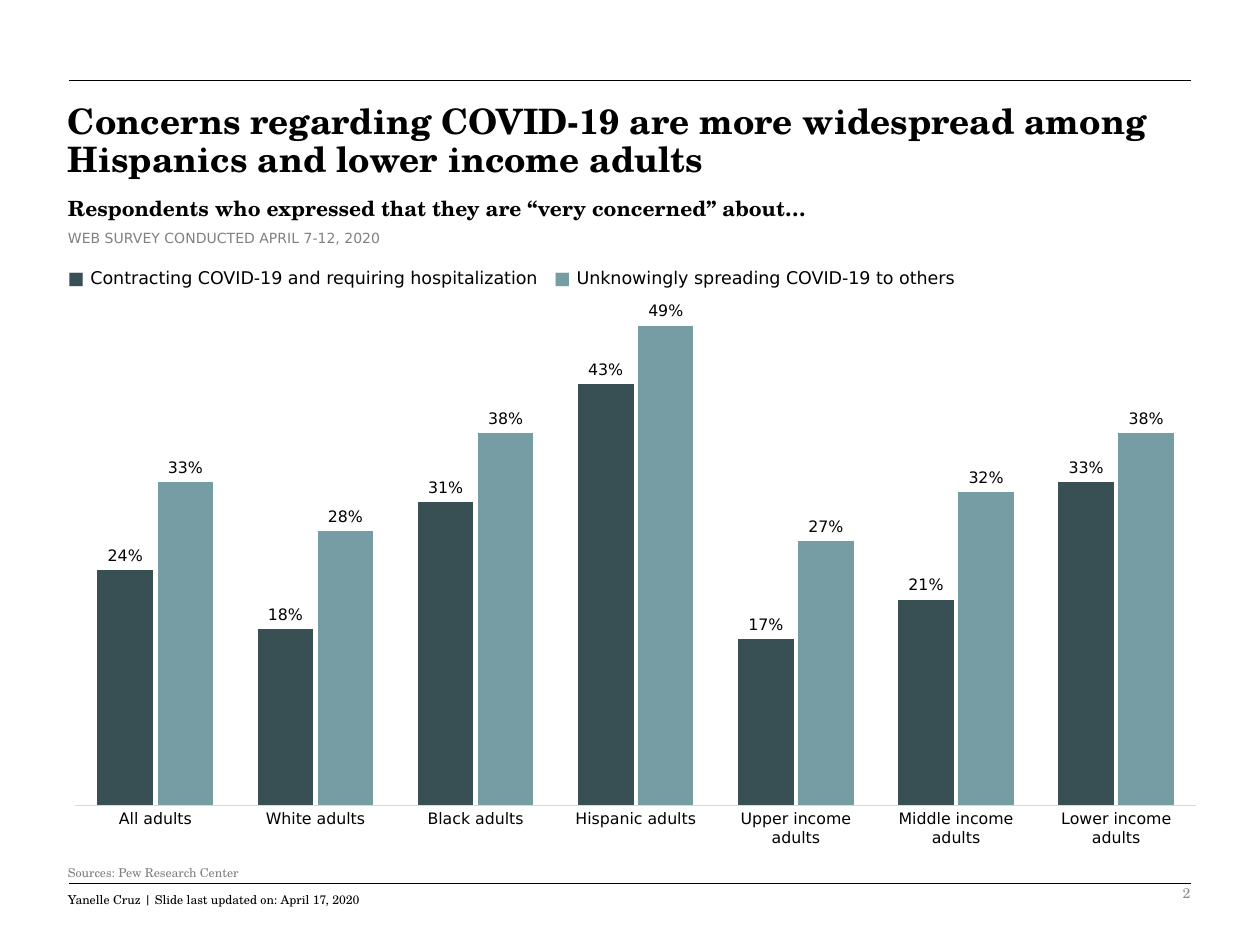
from lxml import etree
from pptx import Presentation
from pptx import util as u
from pptx.chart.data import CategoryChartData
from pptx.dml.color import RGBColor
from pptx.enum import chart as ch
from pptx.enum import shapes, text
from pptx.oxml import parse_xml
from pptx.oxml.ns import nsdecls, qn

BLACK = RGBColor(0x00, 0x00, 0x00)
GRAY = RGBColor(0x80, 0x80, 0x80)
SILVER = RGBColor(0x8C, 0x8C, 0x8C)
PALE = RGBColor(0xD9, 0xD9, 0xD9)
DARK = RGBColor(0x38, 0x50, 0x54)
TEAL = RGBColor(0x76, 0x9D, 0xA3)

SERIF = "TeX Gyre Schola"
SANS = "DejaVu Sans"
LEFT = 1.12
WIDE = 23.37

CATS = ["All adults", "White adults", "Black adults", "Hispanic adults",
        "Upper income adults", "Middle income adults", "Lower income adults"]
SERIES = [
    ("Series 1", DARK, [0.24, 0.18, 0.31, 0.43, 0.17, 0.21, 0.33]),
    ("Series 2", TEAL, [0.33, 0.28, 0.38, 0.49, 0.27, 0.32, 0.38]),
]


def style(font, face, size, color, bold=False):
    font.name = face
    font.size = u.Pt(size)
    font.color.rgb = color
    font.bold = bold


def add_box(slide, left, top, width, height):
    box = slide.shapes.add_textbox(u.Cm(left), u.Cm(top), u.Cm(width), u.Cm(height))
    box.text_frame.word_wrap = True
    return box.text_frame


def add_text(slide, words, place, face, size, color, bold=False, space=None):
    frame = add_box(slide, *place)
    frame.text = words
    para = frame.paragraphs[0]
    para.line_spacing = space
    style(para.runs[0].font, face, size, color, bold)
    return frame


def add_rule(slide, top):
    rule = slide.shapes.add_connector(
        shapes.MSO_CONNECTOR.STRAIGHT, u.Cm(1.4), u.Cm(top), u.Cm(24), u.Cm(top))
    rule.line.color.rgb = BLACK
    rule.line.width = u.Pt(0.5)
    etree.SubElement(rule._element.spPr, qn("a:effectLst"))


def add_key(slide, items):
    """Legend line: a colored square and a label per item, parted by a tab."""
    para = add_box(slide, LEFT, 4.98, 21.36, 0.69).paragraphs[0]
    stop = u.Cm(9.8)
    para._p.get_or_add_pPr().append(parse_xml(
        f'<a:tabLst {nsdecls("a")}><a:tab pos="{stop}" algn="l"/></a:tabLst>'))
    for i, (label, color) in enumerate(items):
        if i:
            para.add_run().text = "\t"
        for words, tint, bold in (("■ ", color, True), (label, BLACK, False)):
            run = para.add_run()
            run.text = words
            style(run.font, SANS, 10, tint, bold)


def set_plot(chart, **sides):
    """Fix the inner plot area as fractions of the chart."""
    area = chart._chartSpace.chart.plotArea
    for old in area.findall(qn("c:layout")):
        area.remove(old)
    parts = "".join(f'<c:{k} val="{v}"/>' for k, v in sides.items())
    area.insert(0, parse_xml(
        f'<c:layout {nsdecls("c")}><c:manualLayout><c:layoutTarget val="inner"/>'
        f'<c:xMode val="edge"/><c:yMode val="edge"/>{parts}'
        '</c:manualLayout></c:layout>'))


def add_bars(slide):
    data = CategoryChartData(number_format="0%")
    data.categories = CATS
    for name, _, vals in SERIES:
        data.add_series(name, vals)
    chart = slide.shapes.add_chart(
        ch.XL_CHART_TYPE.COLUMN_CLUSTERED, u.Cm(LEFT), u.Cm(5.31),
        u.Cm(WIDE), u.Cm(12.01), data).chart
    chart.has_legend = False
    chart.has_title = False
    style(chart.font, SERIF, 10, BLACK)
    set_plot(chart, x=0.017, y=0.006, w=0.967, h=0.904)

    # Axes
    val = chart.value_axis
    val.minimum_scale, val.maximum_scale = 0, 0.55
    val.has_major_gridlines = False
    val.visible = False
    cat = chart.category_axis
    cat.major_tick_mark = ch.XL_TICK_MARK.NONE
    cat.format.line.color.rgb = PALE
    cat.format.line.width = u.Pt(0.75)
    style(cat.tick_labels.font, SANS, 9, BLACK)

    # Columns and their labels
    plot = chart.plots[0]
    plot.gap_width, plot.overlap = 80, -8
    plot.vary_by_categories = False
    for bars, (_, color, _) in zip(plot.series, SERIES):
        bars.format.fill.solid()
        bars.format.fill.fore_color.rgb = color
        tags = bars.data_labels
        tags.show_value = True
        tags.position = ch.XL_LABEL_POSITION.OUTSIDE_END
        tags.number_format = "0%"
        tags.number_format_is_linked = False
        style(tags.font, SANS, 9, BLACK)


def main():
    deck = Presentation()
    deck.slide_width, deck.slide_height = u.Cm(25.4), u.Cm(19.05)
    slide = deck.slides.add_slide(deck.slide_layouts[6])

    # Frame rules and page number
    for top in (17.81, 1.63):
        add_rule(slide, top)
    page = add_text(slide, "2", (17.93, 17.5, 6.32, 1.02), SERIF, 8, SILVER)
    page.vertical_anchor = text.MSO_ANCHOR.MIDDLE
    page.paragraphs[0].alignment = text.PP_ALIGN.RIGHT

    # Title
    add_text(slide, "Concerns regarding COVID-19 are more widespread among "
             "Hispanics and lower income adults",
             (LEFT, 1.98, WIDE, 1.78), SERIF, 20, BLACK, True, 0.9)

    # Footer and sources
    add_text(slide, "Yanelle Cruz | Slide last updated on: April 17, 2020",
             (LEFT, 17.83, 8.46, 0.58), SERIF, 7, BLACK, space=1.1)
    note = add_text(slide, "Sources: Pew Research Center",
                    (LEFT, 16.94, 12.07, 0.84), SERIF, 7, GRAY, space=1.1)
    note.vertical_anchor = text.MSO_ANCHOR.BOTTOM
    note.margin_bottom = u.Cm(0.05)

    # Chart with its key and headings
    add_bars(slide)
    add_key(slide, [("Contracting COVID-19 and requiring hospitalization", DARK),
                    ("Unknowingly spreading COVID-19 to others", TEAL)])
    add_text(slide, "Respondents who expressed that they are “very concerned” about…",
             (LEFT, 3.81, 15.67, 0.76), SERIF, 12, BLACK, True)
    add_text(slide, "WEB SURVEY CONDUCTED APRIL 7-12, 2020",
             (LEFT, 4.5, 7.65, 0.61), SANS, 8, GRAY)

    deck.save("out.pptx")


if __name__ == "__main__":
    main()
